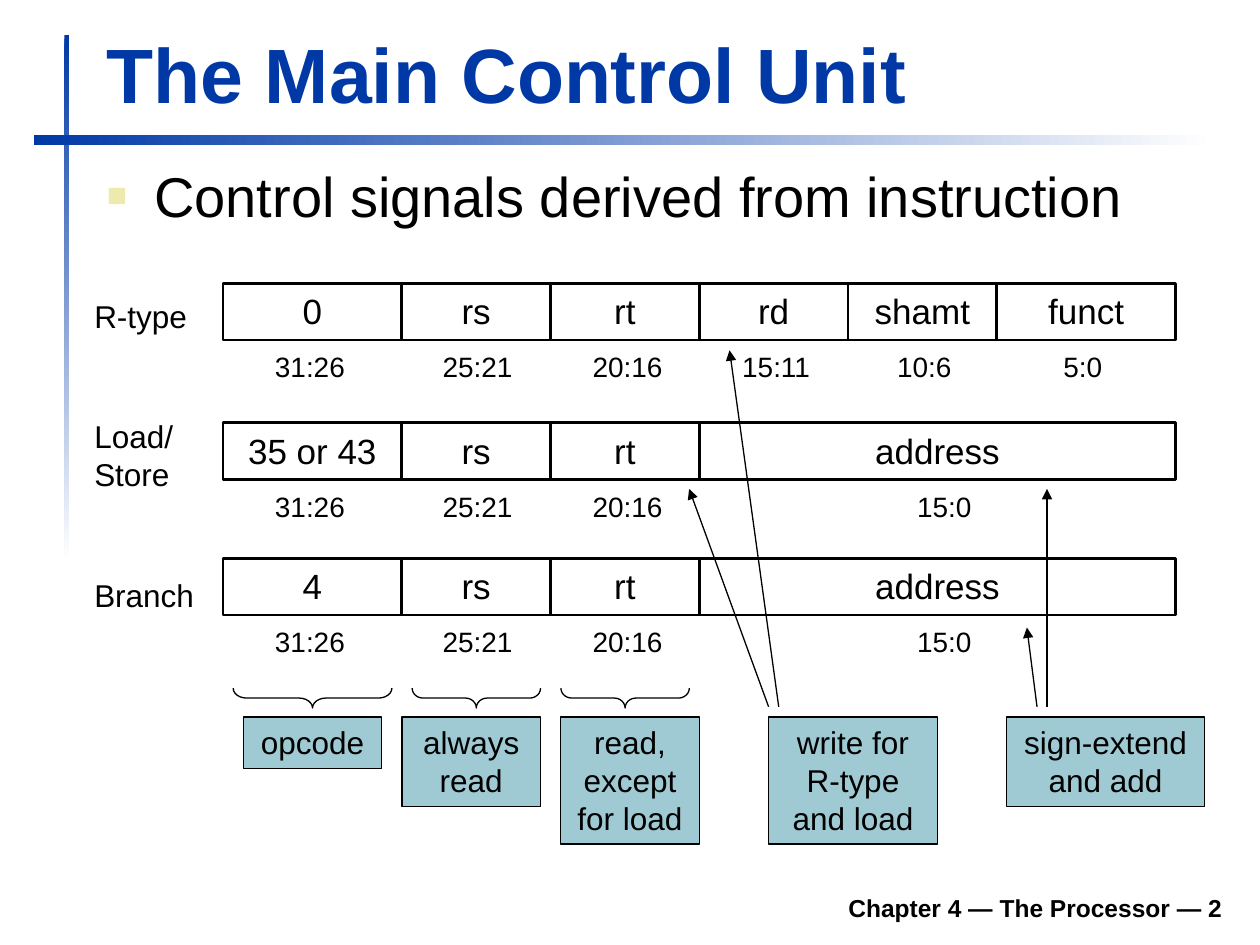
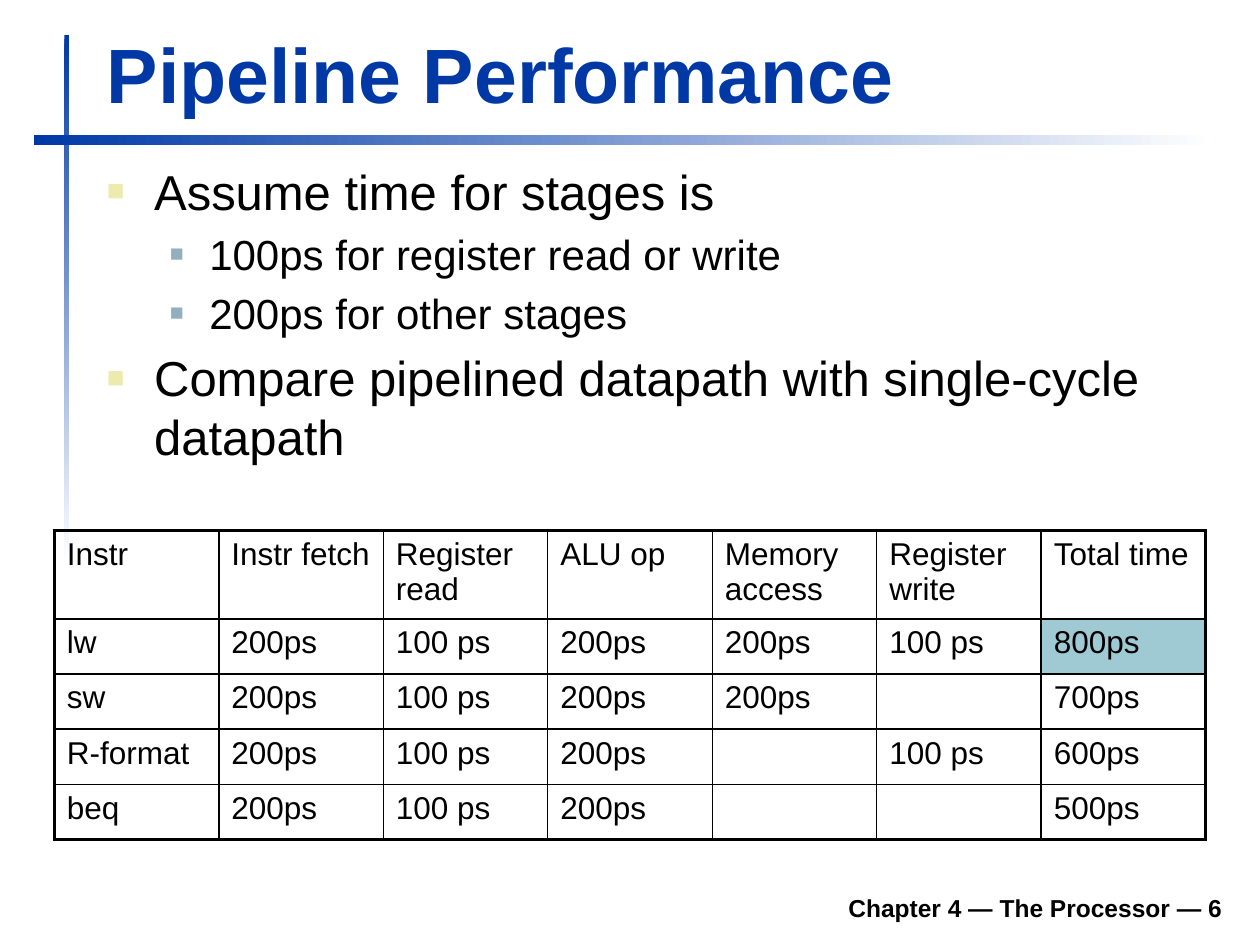
"""Build two processor slides: main control unit and pipeline performance."""
from dataclasses import dataclass
from lxml import etree
from pptx import Presentation
from pptx import util as u
from pptx.dml.color import RGBColor
from pptx.enum import shapes, text
from pptx.oxml.ns import qn


@dataclass(frozen=True)
class Theme:
    face: str = "Arial"
    ink: RGBColor = RGBColor(0, 0, 0)
    blue: RGBColor = RGBColor(0x00, 0x39, 0xA6)
    white: RGBColor = RGBColor(255, 255, 255)
    teal: RGBColor = RGBColor(0x9F, 0xCA, 0xD3)
    title: int = 44
    field: int = 20
    label: int = 18
    bits: int = 16
    foot: int = 14
    hair: float = 0.75
    thin: float = 1
    rule: float = 1.5
    thick: float = 2.25


T = Theme()
LEFT, MID, RIGHT = (text.PP_ALIGN.LEFT, text.PP_ALIGN.CENTER, text.PP_ALIGN.RIGHT)
LOW = {"vertical_anchor": text.MSO_ANCHOR.BOTTOM}
FREE = {"word_wrap": False}
RECT = shapes.MSO_SHAPE.RECTANGLE


def mark(node, tag, **vals):
    """Append a DrawingML child with the given attributes."""
    return etree.SubElement(node, qn(tag), {k: str(v) for k, v in vals.items()})


def write(frame, rows, align=LEFT, hold=None, **looks):
    """Fill a text frame with (words, size) paragraphs."""
    for key, val in {"word_wrap": True, **(hold or {})}.items():
        setattr(frame, key, val)
    for i, (words, size) in enumerate(rows):
        para = frame.paragraphs[0] if i == 0 else frame.add_paragraph()
        para.text, para.alignment = words, align
        for run in para.runs:
            run.font.color.rgb = looks.get("color", T.ink)
            vals = {"name": T.face, "size": u.Pt(size), "bold": looks.get("bold", False)}
            for key, val in vals.items():
                setattr(run.font, key, val)


deck = Presentation()
deck.slide_width, deck.slide_height = u.Pt(720), u.Pt(540)

bands = [((36.8, 20.2, 2.6, 300.2), 270), ((19.5, 77, 674.6, 5.8), 0)]
pages = [
    ("The Main Control Unit", 2, 54.7,
     [(0, 32, "Control signals derived from instruction")]),
    ("Pipeline Performance", 6, 199.4,
     [(0, 28, "Assume time for stages is"),
      (1, 24, "100ps for register read or write"),
      (1, 24, "200ps for other stages"),
      (0, 28, "Compare pipelined datapath with single-cycle datapath")]),
]
bullets = [(27, "ECEAAC", 60, 27), (58.5, "91AFBF", 55, 22.5)]

slides = []
for title, num, high, items in pages:
    slide = deck.slides.add_slide(deck.slide_layouts[6])
    slides.append(slide)
    for at, turn in bands:
        band = slide.shapes.add_shape(RECT, *map(u.Pt, at))
        band.shadow.inherit = False
        band.line.fill.background()
        band.fill.gradient()
        band.fill.gradient_angle = turn
        for stop, color in zip(band.fill.gradient_stops, (T.blue, T.white)):
            stop.color.rgb = color
    foot = slide.shapes.add_textbox(*map(u.Pt, (133.2, 502.6, 572.4, 28.1)))
    write(foot.text_frame, [(f"Chapter 4 — The Processor — {num}", T.foot)],
          RIGHT, LOW, bold=True)
    head = slide.shapes.add_textbox(*map(u.Pt, (54, 11.5, 650.2, 59.8)))
    write(head.text_frame, [(title, T.title)], LEFT, LOW, color=T.blue, bold=True)
    body = slide.shapes.add_textbox(*map(u.Pt, (54, 88.6, 651.6, high))).text_frame
    write(body, [(words, size) for _, size, words in items])
    for para, (level, _, _) in zip(body.paragraphs, items):
        inset, color, scale, hang = bullets[level]
        para.level = level
        prop = para._p.get_or_add_pPr()
        prop.set("marL", str(u.Pt(inset)))
        prop.set("indent", str(-u.Pt(hang)))
        mark(mark(prop, "a:spcBef"), "a:spcPct", val=20000)
        mark(mark(prop, "a:buClr"), "a:srgbClr", val=color)
        mark(prop, "a:buSzPct", val=scale * 1000)
        mark(prop, "a:buFont", typeface=T.face)
        mark(prop, "a:buChar", char="■")

unit, perf = slides

spans = {
    "31:26": (127.4, 102.2, 177.1),
    "25:21": (229.6, 85, 272.9),
    "20:16": (314.6, 85, 358.6),
    "15:11": (399.6, 85, 443.5),
    "10:6": (484.6, 85, 528.1),
    "5:0": (569.6, 102.2, 618.8),
    "15:0": (399.6, 272.2, 539.6),
}
short = ["31:26", "25:21", "20:16", "15:0"]
kinds = [
    ("R-type", 166.3, 162, ["0", "rs", "rt", "rd", "shamt", "funct"], list(spans)[:6]),
    ("Load/\nStore", 234.7, 241.6, ["35 or 43", "rs", "rt", "address"], short),
    ("Branch", 325.4, 319, ["4", "rs", "rt", "address"], short),
]
cards = [
    ("opcode", 139, 79.2, 1),
    ("always read", 229.7, 79.2, 2),
    ("read, except for load", 320.4, 79.2, 3),
    ("write for R-type and load", 439.2, 96.5, 3),
    ("sign-extend and add", 575.3, 113, 2),
]

boxes = [((left, 409.7, wide, 7.8 + 21.6 * rows), words, T.label, T.hair, T.teal)
         for words, left, wide, rows in cards]
notes = []
for name, drop, top, fields, keys in kinds:
    notes.append(((46.8, drop, 72, 28.8), name, T.label, LEFT))
    for words, key in zip(fields, keys):
        left, wide, mid = spans[key]
        boxes.append(((left, top, wide, 32.4), words, T.field, T.rule, None))
        span = 9 * len(key) + 9.6
        notes.append(((mid - span / 2, top + 34.4, span, 26.6), key, T.bits, MID))

for at, words, size, weight, color in boxes:
    box = unit.shapes.add_shape(RECT, *map(u.Pt, at))
    box.shadow.inherit = False
    box.line.color.rgb, box.line.width = T.ink, u.Pt(weight)
    if color:
        box.fill.solid()
        box.fill.fore_color.rgb = color
    else:
        box.fill.background()
    write(box.text_frame, [(words, size)], MID, {"vertical_anchor": text.MSO_ANCHOR.TOP})

for at, words, size, align in notes:
    note = unit.shapes.add_textbox(*map(u.Pt, at))
    write(note.text_frame, [(words, size)], align, FREE)

for mid, wide, bend in [(178.6, 90.7, 0.67), (272.2, 73.4, 0.54), (357.2, 73.4, 0.54)]:
    at = (mid - 5.7, 398.9 - wide / 2, 11.4, wide)
    brace = unit.shapes.add_shape(shapes.MSO_SHAPE.LEFT_BRACE, *map(u.Pt, at))
    brace.rotation = 270
    brace.adjustments[0] = bend
    brace.shadow.inherit = False
    brace.fill.background()
    brace.line.color.rgb, brace.line.width = T.ink, u.Pt(T.hair)

for start, end, tip in [(439.2, 393.8, 279.4), (445, 416.9, 200.2),
                        (592.6, 586.8, 358.6), (598.3, 598.3, 279.4)]:
    arrow = unit.shapes.add_connector(
        shapes.MSO_CONNECTOR.STRAIGHT, *map(u.Pt, (start, 403.9, end, tip)))
    arrow.line.color.rgb, arrow.line.width = T.ink, u.Pt(T.hair)
    mark(arrow.get_or_add_ln(), "a:tailEnd", type="triangle")
    mark(arrow._element.spPr, "a:effectLst")

times = [
    ["Instr", "Instr fetch", "Register read", "ALU op", "Memory access",
     "Register write", "Total time"],
    ["lw", "200ps", "100 ps", "200ps", "200ps", "100 ps", "800ps"],
    ["sw", "200ps", "100 ps", "200ps", "200ps", "", "700ps"],
    ["R-format", "200ps", "100 ps", "200ps", "", "100 ps", "600ps"],
    ["beq", "200ps", "100 ps", "200ps", "", "", "500ps"],
]
rows, cols = len(times), len(times[0])
grid = perf.shapes.add_table(rows, cols, *map(u.Pt, (31, 303.1, 658, 174.2))).table
grid.first_row = grid.horz_banding = False
for col in grid.columns:
    col.width = u.Pt(94)
for r, line in enumerate(times):
    grid.rows[r].height = u.Pt(31.6 if r else 47.6)
    for c, words in enumerate(line):
        cell = grid.cell(r, c)
        write(cell.text_frame, [(words, T.label)])
        prop = cell.text_frame.paragraphs[0]._p.get_or_add_pPr()
        mark(mark(prop, "a:spcBef"), "a:spcPct", val=20000)
        edges = {
            "L": T.thin if c else T.thick,
            "R": T.thin if c < cols - 1 else T.thick,
            "T": {0: T.thick, 1: T.rule}.get(r, T.thin),
            "B": {0: T.rule, rows - 1: T.thick}.get(r, T.thin),
        }
        for side, weight in edges.items():
            edge = mark(cell._tc.get_or_add_tcPr(), f"a:ln{side}", w=u.Pt(weight))
            mark(mark(edge, "a:solidFill"), "a:srgbClr", val=T.ink)
        if words == "800ps":
            cell.fill.solid()
            cell.fill.fore_color.rgb = T.teal
        else:
            cell.fill.background()

deck.save("out.pptx")
